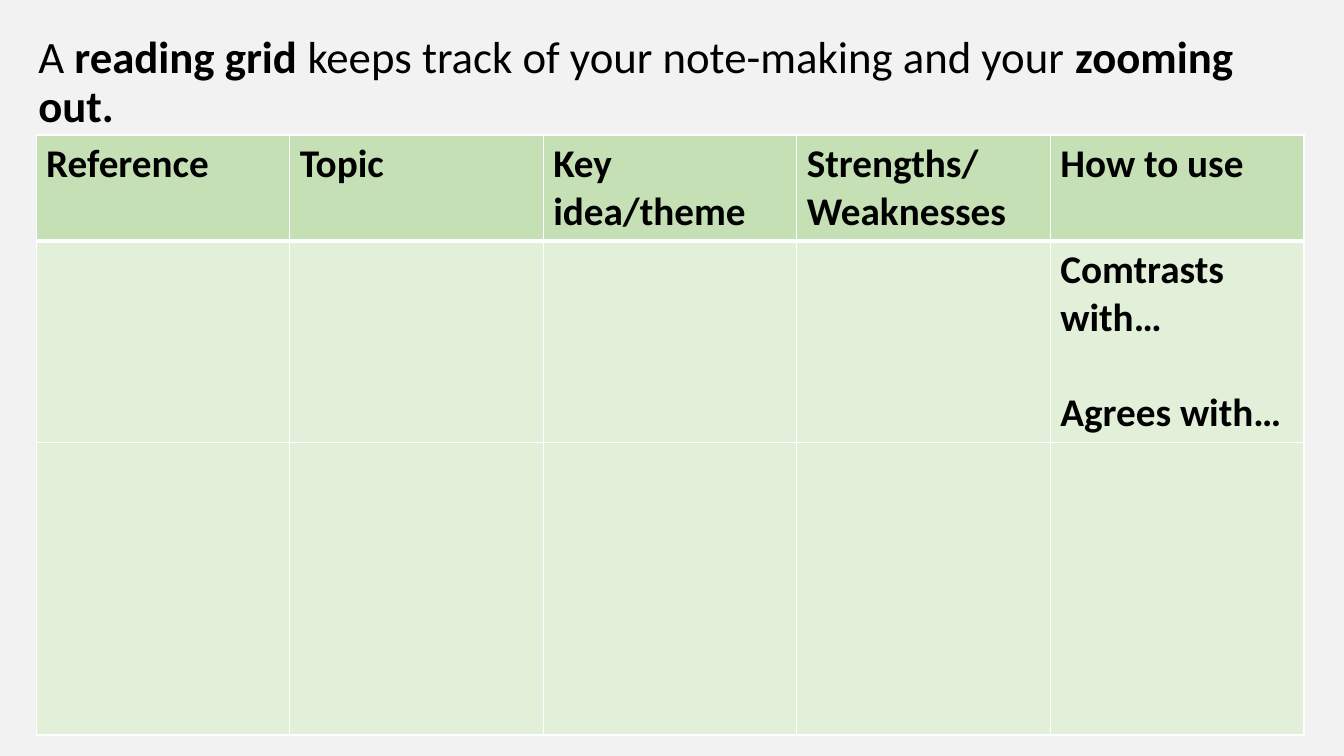
from lxml import etree
from pptx import Presentation
from pptx import util as u
from pptx.dml.color import RGBColor
from pptx.enum import text
from pptx.oxml.ns import qn

BACKGROUND = RGBColor(0xF2, 0xF2, 0xF2)
INK = RGBColor(0, 0, 0)
HEADING_GREEN = RGBColor(0xC5, 0xE0, 0xB4)
BODY_GREEN = RGBColor(0xE2, 0xF0, 0xD9)
RULE_WHITE = RGBColor(0xFF, 0xFF, 0xFF)

TITLE_PLACE = {"left": u.Cm(0.71), "top": u.Cm(0.79),
               "width": u.Cm(32.39), "height": u.Cm(2.62)}
TITLE_PARTS = [
    ("A ", False),
    ("reading grid ", True),
    ("keeps track of your note-making and your ", False),
    ("zooming out.", True),
]
COLUMN_WIDTH = u.Cm(6.39)
ROW_HEIGHTS = [u.Cm(2.67), u.Cm(5.08), u.Cm(7.37)]
HEADINGS = [["Reference"], ["Topic"], ["Key idea/theme"],
            ["Strengths/", "Weaknesses"], ["How to use"]]
COLUMN_COUNT = len(HEADINGS)
GRID = [
    HEADINGS,
    [[]] * (COLUMN_COUNT - 1) + [["Comtrasts with…", "Agrees with…"]],
    [[]] * COLUMN_COUNT,
]


def apply(target, values):
    for name, value in values.items():
        setattr(target, name, value)


def add_words(paragraph, words, size, bold):
    run = paragraph.add_run()
    run.text = words
    apply(run.font, {"name": "Calibri", "size": u.Pt(size), "bold": bold})
    run.font.color.rgb = INK


def write_title(title):
    apply(title, TITLE_PLACE)
    apply(title.text_frame, {"word_wrap": True,
                             "auto_size": text.MSO_AUTO_SIZE.NONE,
                             "vertical_anchor": text.MSO_ANCHOR.MIDDLE})
    sentence = title.text_frame.paragraphs[0]
    apply(sentence, {"line_spacing": 0.9, "alignment": text.PP_ALIGN.LEFT})
    for words, bold in TITLE_PARTS:
        add_words(sentence, words, 32, bold)


def rule_cell(cell, bottom_width):
    properties = cell._tc.get_or_add_tcPr()
    for side in "LRTB":
        width = bottom_width if side == "B" else 1
        rule = etree.SubElement(properties, qn(f"a:ln{side}"), w=str(u.Pt(width)))
        fill = etree.SubElement(rule, qn("a:solidFill"))
        etree.SubElement(fill, qn("a:srgbClr"), val=str(RULE_WHITE))


def fill_cell(cell, lines, colour, bottom_width, gap):
    rule_cell(cell, bottom_width)
    cell.fill.solid()
    cell.fill.fore_color.rgb = colour
    for index, line in enumerate(lines):
        frame = cell.text_frame
        paragraph = frame.add_paragraph() if index else frame.paragraphs[0]
        if index:
            paragraph.space_before = gap
        add_words(paragraph, line, 28, True)


def add_reading_grid(slide):
    grid = slide.shapes.add_table(
        len(GRID), COLUMN_COUNT, u.Cm(0.91), u.Cm(3.4),
        COLUMN_WIDTH * COLUMN_COUNT, sum(ROW_HEIGHTS)).table
    for column in grid.columns:
        column.width = COLUMN_WIDTH
    for row, (height, entries) in enumerate(zip(ROW_HEIGHTS, GRID)):
        grid.rows[row].height = height
        colour, bottom_width, gap = (
            (BODY_GREEN, 1, u.Pt(34)) if row else (HEADING_GREEN, 3, u.Pt(0)))
        for column, lines in enumerate(entries):
            fill_cell(grid.cell(row, column), lines, colour, bottom_width, gap)


def main():
    deck = Presentation()
    apply(deck, {"slide_width": u.Cm(33.87), "slide_height": u.Cm(19.05)})
    slide = deck.slides.add_slide(deck.slide_layouts[5])
    slide.background.fill.solid()
    slide.background.fill.fore_color.rgb = BACKGROUND
    write_title(slide.shapes.title)
    add_reading_grid(slide)
    deck.save("out.pptx")


if __name__ == "__main__":
    main()
